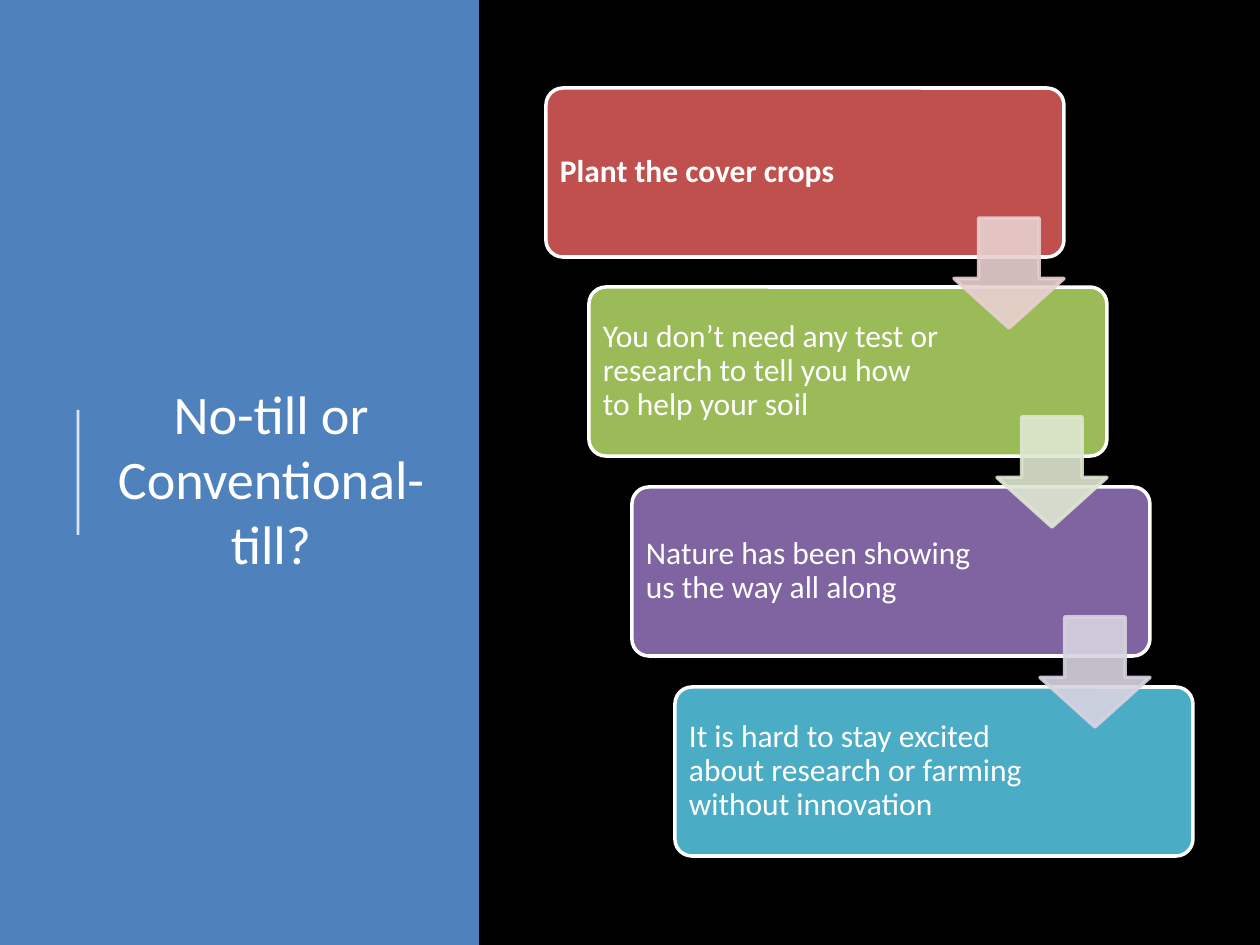
from dataclasses import dataclass

from lxml import etree
from pptx import Presentation
from pptx import util as u
from pptx.dml.color import RGBColor
from pptx.enum import shapes, text
from pptx.oxml.ns import qn


@dataclass(frozen=True)
class Theme:
    font: str = "Calibri"
    background: str = "000000"
    panel: str = "4F81BD"
    light: str = "FFFFFF"
    title_size: int = 31
    step_size: int = 18


@dataclass(frozen=True)
class Step:
    words: str
    fill: str
    arrow: str | None
    text_width: int = 355
    bold: bool = False


THEME = Theme()
EMU_PER_PX = 914400 / 126
STEPS = [
    Step("Plant the cover crops", "C0504D", "E8D0D0", 321, True),
    Step("You don’t need any test or research to tell you how to help your soil",
         "9BBB59", "DEE7D1"),
    Step("Nature has been showing us the way all along", "8064A2", "D8D3E0"),
    Step("It is hard to stay excited about research or farming without innovation",
         "4BACC6", None),
]
FIRST_LEFT, FIRST_TOP = 546, 88
LAST_TOP = 687
STEP_RIGHT = 43
BOX_WIDTH, BOX_HEIGHT = 518, 169
INSET = 5
ARROW_RIGHT, ARROW_DOWN, ARROW_SIZE = 408, 130, 110


def px(length: float) -> int:
    return round(length * EMU_PER_PX)


def set_alpha(color_parent, percent: int) -> None:
    color = color_parent.find(".//" + qn("a:srgbClr"))
    etree.SubElement(color, qn("a:alpha"), val=str(percent * 1000))


def style_line(line, color: str, width: float) -> None:
    line.color.rgb = RGBColor.from_string(color)
    line.width = u.Pt(width)


def add_block(parent, kind, box: tuple, fill: str, line: str | None = None,
              adjustments: tuple = (), alpha: int = 100):
    shape = parent.add_shape(kind, *map(px, box))
    shape.shadow.inherit = False
    shape.fill.solid()
    shape.fill.fore_color.rgb = RGBColor.from_string(fill)
    if line:
        style_line(shape.line, line, 2)
    else:
        shape.line.fill.background()
    for index, value in enumerate(adjustments):
        shape.adjustments[index] = value
    if alpha < 100:
        properties = shape._element.spPr
        set_alpha(properties.find(qn("a:solidFill")), alpha)
        set_alpha(properties.find(qn("a:ln")), alpha)
    return shape


def write_text(shape, words: str, *, size: int, bold: bool = False,
               align=text.PP_ALIGN.LEFT, spacing: float = 1.0,
               margin: int = 9) -> None:
    frame = shape.text_frame
    frame.word_wrap = True
    frame.auto_size = text.MSO_AUTO_SIZE.NONE
    frame.vertical_anchor = text.MSO_ANCHOR.MIDDLE
    frame.margin_left = frame.margin_right = px(margin)
    frame.margin_top = frame.margin_bottom = px(margin)
    paragraph = frame.paragraphs[0]
    paragraph.alignment = align
    paragraph.line_spacing = spacing
    run = paragraph.add_run()
    run.text = words
    run.font.name = THEME.font
    run.font.size = u.Pt(size)
    run.font.bold = bold
    run.font.color.rgb = RGBColor.from_string(THEME.light)


def add_title(slide, words: str) -> None:
    title = slide.shapes.title
    title.left, title.top, title.width, title.height = map(px, (97, 98, 348, 759))
    write_text(title, words, size=THEME.title_size, align=text.PP_ALIGN.CENTER,
               margin=12)


def add_accent(slide) -> None:
    accent = slide.shapes.add_connector(
        shapes.MSO_CONNECTOR.STRAIGHT, *map(px, (78, 535, 78, 410)))
    style_line(accent.line, THEME.light, 1.5)
    properties = accent._element.spPr
    set_alpha(properties.find(qn("a:ln")), 80)
    etree.SubElement(properties, qn("a:effectLst"))


def step_corner(index: int) -> tuple[int, int]:
    drop = (LAST_TOP - FIRST_TOP) * index // (len(STEPS) - 1)
    return FIRST_LEFT + STEP_RIGHT * index, FIRST_TOP + drop


def add_step(parent, step: Step, left: int, top: int) -> None:
    add_block(parent, shapes.MSO_SHAPE.ROUNDED_RECTANGLE,
              (left, top, BOX_WIDTH, BOX_HEIGHT), step.fill, THEME.light, (0.1,))
    label = parent.add_textbox(*map(px, (left + INSET, top + INSET, step.text_width,
                                         BOX_HEIGHT - 2 * INSET)))
    write_text(label, step.words, size=THEME.step_size, bold=step.bold, spacing=0.9)


def add_arrow(parent, color: str, left: int, top: int) -> None:
    add_block(parent, shapes.MSO_SHAPE.DOWN_ARROW,
              (left + ARROW_RIGHT, top + ARROW_DOWN, ARROW_SIZE, ARROW_SIZE),
              color, color, (0.55, 0.45), alpha=90)


def main() -> None:
    presentation = Presentation()
    presentation.slide_width, presentation.slide_height = px(1260), px(945)
    slide = presentation.slides.add_slide(presentation.slide_layouts[5])
    slide.background.fill.solid()
    slide.background.fill.fore_color.rgb = RGBColor.from_string(THEME.background)

    panel = add_block(slide.shapes, shapes.MSO_SHAPE.RECTANGLE,
                      (0, 0, 479, 945), THEME.panel)
    slide.shapes.title._element.addprevious(panel._element)
    add_title(slide, "No-till or Conventional-till?")
    add_accent(slide)

    staircase = slide.shapes.add_group_shape().shapes
    for index, step in enumerate(STEPS):
        add_step(staircase, step, *step_corner(index))
    for index, step in enumerate(STEPS):
        if step.arrow:
            add_arrow(staircase, step.arrow, *step_corner(index))
    presentation.save("out.pptx")


if __name__ == "__main__":
    main()
